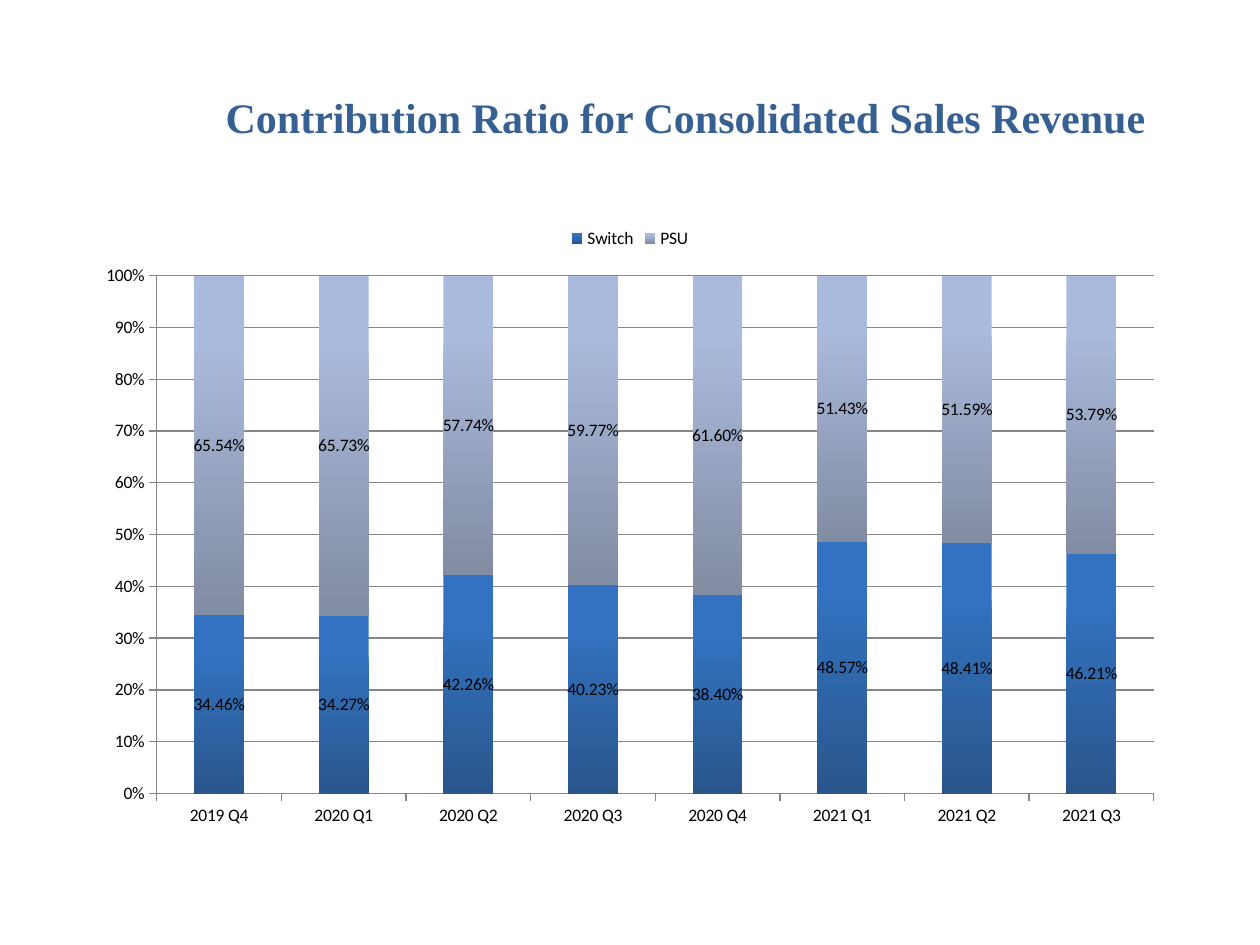
import pptx
import pptx.chart.data
import pptx.dml.color
import pptx.enum.chart
import pptx.enum.text
import pptx.util
from dataclasses import dataclass

# Content
TITLE = "Contribution Ratio for Consolidated Sales Revenue"
QUARTERS = ["2019 Q4", "2020 Q1", "2020 Q2", "2020 Q3",
            "2020 Q4", "2021 Q1", "2021 Q2", "2021 Q3"]
SWITCH_SHARES = [0.3446, 0.3427, 0.4226, 0.4023, 0.384, 0.4857, 0.4841, 0.4621]
REVENUE_SHARES = {
    "Switch": SWITCH_SHARES,
    "PSU": [round(1 - share, 4) for share in SWITCH_SHARES],
}


@dataclass(frozen=True)
class Theme:
    title_font: str = "Times New Roman"
    chart_font: str = "Calibri"
    title_size: int = 24
    chart_size: int = 10
    title_color: str = "376092"
    text_color: str = "000000"
    line_color: str = "868686"
    # Top and bottom colour of each series
    gradients: tuple = (("3272C0", "2A568C"), ("AABADC", "828CA3"))


THEME = Theme()
SLIDE_W, SLIDE_H = 10, 7.5

# Left, top, width and height as shares of the slide
TITLE_BOX = (0.169, 0.09, 0.756, 0.16)
CHART_BOX = (0.067, 0.227, 0.866, 0.66)


def place(box):
    sizes = (SLIDE_W, SLIDE_H, SLIDE_W, SLIDE_H)
    return [pptx.util.Inches(share * size) for share, size in zip(box, sizes)]


def rgb(color):
    return pptx.dml.color.RGBColor.from_string(color)


def style_font(font, name, size, color, bold=False):
    font.name, font.size, font.bold = name, pptx.util.Pt(size), bold
    font.color.rgb = rgb(color)


def style_line(line):
    line.color.rgb = rgb(THEME.line_color)
    line.width = pptx.util.Pt(0.75)


def add_title(slide):
    title = slide.shapes.title
    title.left, title.top, title.width, title.height = place(TITLE_BOX)
    frame = title.text_frame
    frame.word_wrap = True
    frame.auto_size = pptx.enum.text.MSO_AUTO_SIZE.NONE
    frame.vertical_anchor = pptx.enum.text.MSO_ANCHOR.TOP
    paragraph = frame.paragraphs[0]
    paragraph.alignment = pptx.enum.text.PP_ALIGN.LEFT
    run = paragraph.add_run()
    run.text = TITLE
    style_font(run.font, THEME.title_font, THEME.title_size, THEME.title_color, True)


def add_revenue_chart(slide):
    data = pptx.chart.data.CategoryChartData(number_format="0.00%")
    data.categories = QUARTERS
    for name, shares in REVENUE_SHARES.items():
        data.add_series(name, shares)
    chart = slide.shapes.add_chart(
        pptx.enum.chart.XL_CHART_TYPE.COLUMN_STACKED, *place(CHART_BOX), data).chart
    chart.has_title = False
    style_font(chart.font, THEME.chart_font, THEME.chart_size, THEME.text_color)

    # Legend
    chart.has_legend = True
    chart.legend.position = pptx.enum.chart.XL_LEGEND_POSITION.TOP
    chart.legend.include_in_layout = False

    # Axes
    for axis in (chart.category_axis, chart.value_axis):
        axis.major_tick_mark = pptx.enum.chart.XL_TICK_MARK.OUTSIDE
        axis.minor_tick_mark = pptx.enum.chart.XL_TICK_MARK.NONE
        style_line(axis.format.line)
    shares_axis = chart.value_axis
    shares_axis.minimum_scale, shares_axis.maximum_scale = 0, 1
    shares_axis.major_unit = 0.1
    shares_axis.tick_labels.number_format = "0%"
    shares_axis.tick_labels.number_format_is_linked = False
    shares_axis.has_major_gridlines = True
    style_line(shares_axis.major_gridlines.format.line)

    # Columns and their labels
    plot = chart.plots[0]
    plot.gap_width, plot.overlap = 150, 100
    plot.vary_by_categories = False
    for series, colors in zip(plot.series, THEME.gradients):
        fill = series.format.fill
        fill.gradient()
        fill.gradient_angle = 270
        for stop, color, position in zip(fill.gradient_stops, colors, (0.2, 1)):
            stop.color.rgb = rgb(color)
            stop.position = position
        labels = series.data_labels
        labels.show_value = True
        labels.number_format = "0.00%"
        labels.number_format_is_linked = False
        labels.position = pptx.enum.chart.XL_LABEL_POSITION.CENTER
        style_font(labels.font, THEME.chart_font, THEME.chart_size, THEME.text_color)


def main():
    deck = pptx.Presentation()
    deck.slide_width = pptx.util.Inches(SLIDE_W)
    deck.slide_height = pptx.util.Inches(SLIDE_H)
    slide = deck.slides.add_slide(deck.slide_layouts.get_by_name("Title Only"))
    add_title(slide)
    add_revenue_chart(slide)
    deck.save("out.pptx")


if __name__ == "__main__":
    main()
